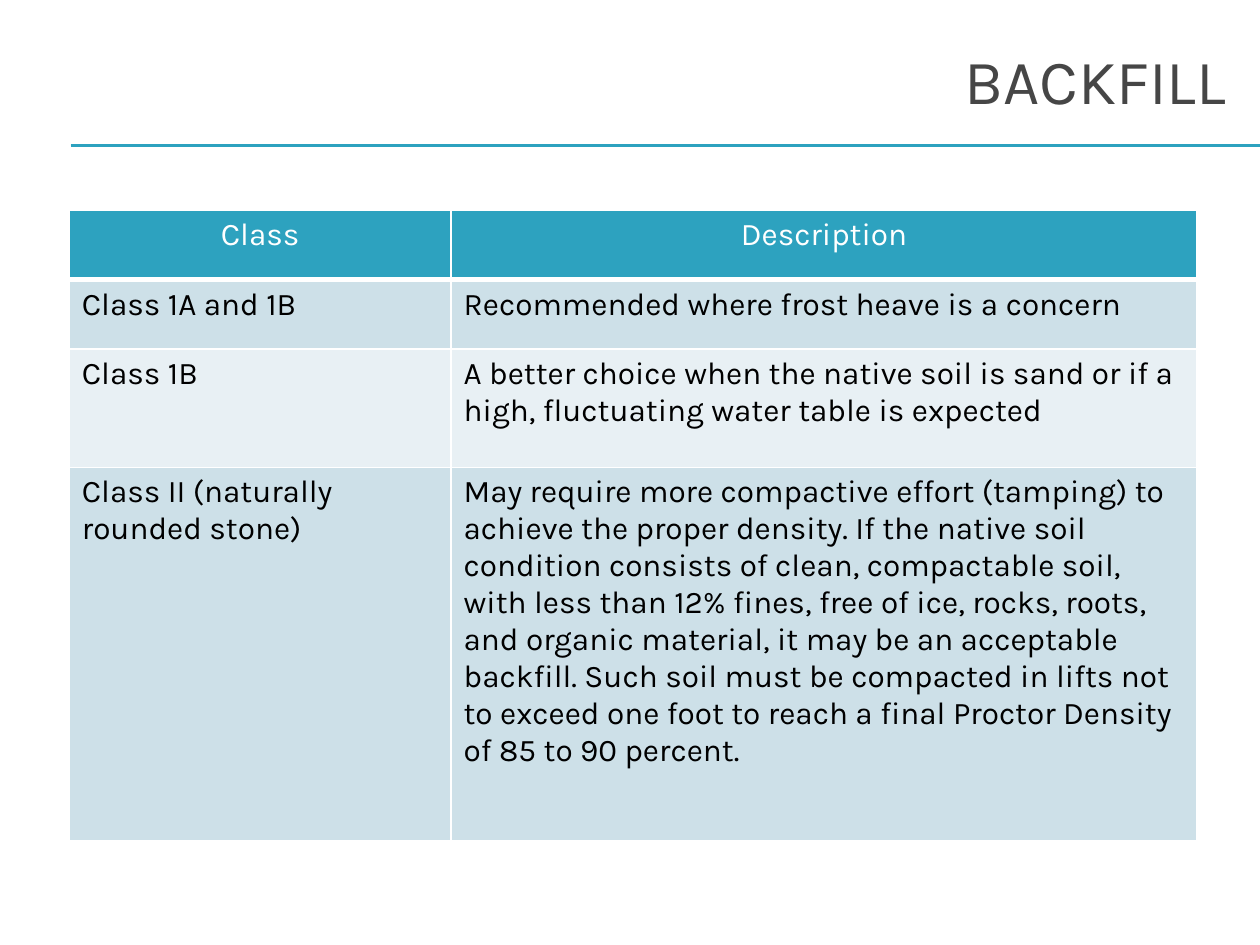
import pptx
import pptx.util
import pptx.dml.color
import pptx.enum.text
import pptx.enum.shapes
import pptx.oxml
import pptx.oxml.ns

Inches, Pt = pptx.util.Inches, pptx.util.Pt
RGB = pptx.dml.color.RGBColor.from_string
ALIGN = pptx.enum.text.PP_ALIGN

TITLE = "BACKFILL"
ROWS = [
    ("Class", "Description"),
    ("Class 1A and 1B", "Recommended where frost heave is a concern"),
    ("Class 1B", "A better choice when the native soil is sand or if a high, "
     "fluctuating water table is expected"),
    ("Class II (naturally rounded stone)",
     "May require more compactive effort (tamping) to achieve the proper density. "
     "If the native soil condition consists of clean, compactable soil, with less "
     "than 12% fines, free of ice, rocks, roots, and organic material, it may be an "
     "acceptable backfill. Such soil must be compacted in lifts not to exceed one "
     "foot to reach a final Proctor Density of 85 to 90 percent."),
]
COL_WIDTHS = [3.03, 5.92]
ROW_HEIGHTS = [0.55, 0.55, 0.94, 2.96]
RULE_YS = [1.15, 1.16]

THEME = {
    "font": "Karla", "title_size": 36, "cell_size": 18,
    "title": "464646", "accent": "2DA2BF", "header_text": "FFFFFF",
    "text": "000000", "bands": ["CDE0E8", "E8F0F4"], "border": "FFFFFF",
}


def style(p, size, color, align):
    p.alignment = align
    for r in p.runs:
        r.font.name = THEME["font"]
        r.font.size = Pt(size)
        r.font.bold = False
        r.font.color.rgb = RGB(color)


def set_borders(cell, bottom):
    tc_pr = cell._tc.get_or_add_tcPr()
    widths = {"lnL": 1, "lnR": 1, "lnT": 1, "lnB": bottom}
    for i, (tag, width) in enumerate(widths.items()):
        tc_pr.insert(i, pptx.oxml.parse_xml(
            f'<a:{tag} {pptx.oxml.ns.nsdecls("a")} w="{Pt(width)}"><a:solidFill>'
            f'<a:srgbClr val="{THEME["border"]}"/></a:solidFill></a:{tag}>'))


def add_title(s):
    sp = s.shapes.title
    sp.left, sp.top, sp.width, sp.height = map(Inches, (0.33, 0.17, 9.5, 0.92))
    tf = sp.text_frame
    tf.text = TITLE
    tf.vertical_anchor = pptx.enum.text.MSO_ANCHOR.MIDDLE
    style(tf.paragraphs[0], THEME["title_size"], THEME["title"], ALIGN.RIGHT)


def add_rule(s, y):
    line = s.shapes.add_connector(pptx.enum.shapes.MSO_CONNECTOR.STRAIGHT,
                                  Inches(0.56), Inches(y), Inches(10), Inches(y))
    line.line.color.rgb = RGB(THEME["accent"])
    line.line.width = Pt(0.75)
    line._element.spPr.append(pptx.oxml.parse_xml(
        f'<a:effectLst {pptx.oxml.ns.nsdecls("a")}/>'))


def add_class_table(s):
    table = s.shapes.add_table(
        len(ROWS), len(COL_WIDTHS), Inches(0.55), Inches(1.67),
        Inches(sum(COL_WIDTHS)), Inches(sum(ROW_HEIGHTS))).table
    for col, width in zip(table.columns, COL_WIDTHS):
        col.width = Inches(width)
    for i, (row, height) in enumerate(zip(table.rows, ROW_HEIGHTS)):
        row.height = Inches(height)
        header = i == 0
        fill = THEME["accent"] if header else THEME["bands"][(i - 1) % 2]
        color = THEME["header_text"] if header else THEME["text"]
        for cell, text in zip(row.cells, ROWS[i]):
            cell.text_frame.text = text
            cell.fill.solid()
            cell.fill.fore_color.rgb = RGB(fill)
            set_borders(cell, 3 if header else 1)
            style(cell.text_frame.paragraphs[0], THEME["cell_size"], color,
                  ALIGN.CENTER if header else ALIGN.LEFT)


def main():
    prs = pptx.Presentation()
    prs.slide_width, prs.slide_height = Inches(10), Inches(7.5)
    s = prs.slides.add_slide(prs.slide_layouts[5])
    for y in RULE_YS:
        add_rule(s, y)
    add_title(s)
    add_class_table(s)
    prs.save("out.pptx")


if __name__ == "__main__":
    main()
